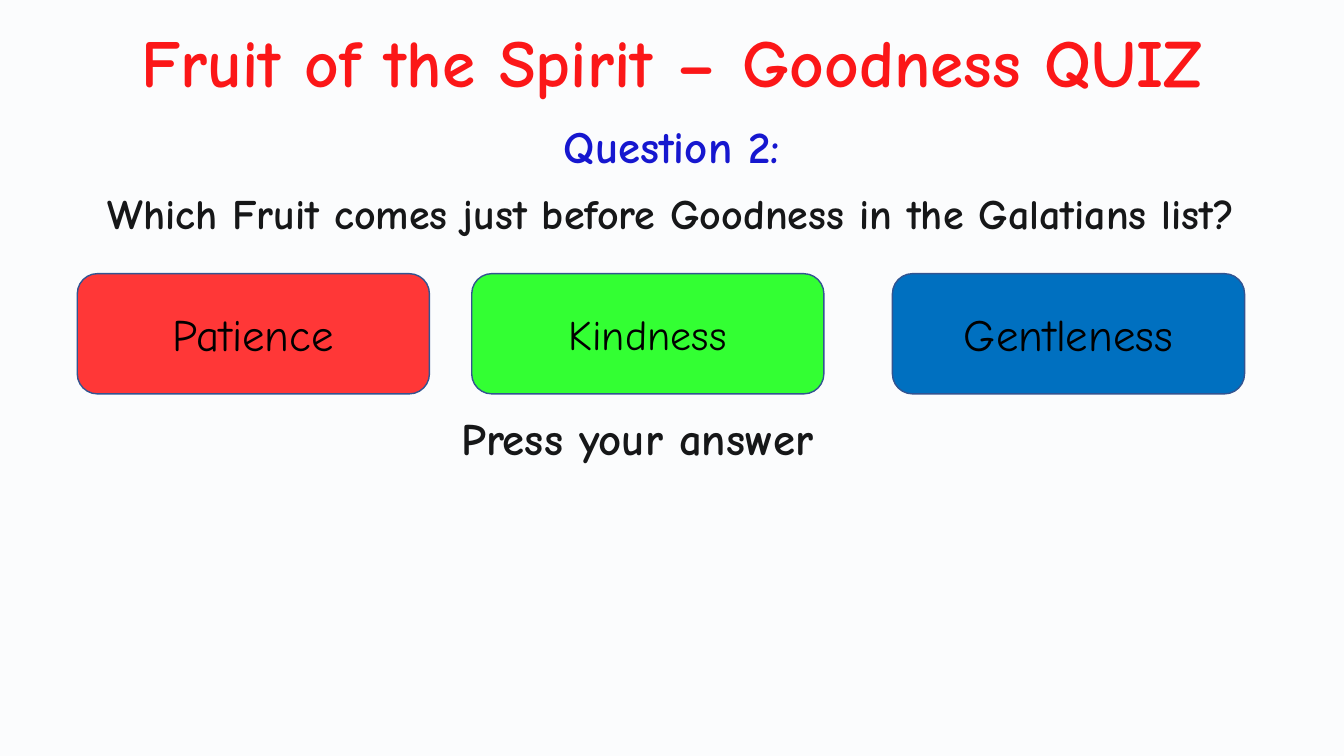
from lxml import etree
from pptx import Presentation
from pptx.dml.color import RGBColor
from pptx.enum.shapes import MSO_SHAPE
from pptx.enum.text import MSO_ANCHOR, MSO_AUTO_SIZE, PP_ALIGN
from pptx.oxml.ns import qn
from pptx.util import Inches, Pt

RECTANGLE = MSO_SHAPE.RECTANGLE
ROUNDED = MSO_SHAPE.ROUNDED_RECTANGLE
TOP, MIDDLE = MSO_ANCHOR.TOP, MSO_ANCHOR.MIDDLE
LEFT, CENTER = PP_ALIGN.LEFT, PP_ALIGN.CENTER
NO_AUTOFIT = MSO_AUTO_SIZE.NONE

TITLE_ONLY_LAYOUT = 5
BLACK, RED, NAVY = "000000", "FF0000", "0000CC"
OUTLINE, VEIL = "325491", "DAE3F3"


def color(value):
    return RGBColor.from_string(value)


class QuizSlide:
    """Places are (left, top, width, height) in percent of the slide's size."""

    font_name = "Comic Neue"

    def __init__(self, presentation):
        self.width = presentation.slide_width
        self.height = presentation.slide_height
        layout = presentation.slide_layouts[TITLE_ONLY_LAYOUT]
        self.slide = presentation.slides.add_slide(layout)

    def box(self, place):
        sides = (self.width, self.height) * 2
        return [round(side * share / 100) for side, share in zip(sides, place)]

    def set_text(self, shape, text, size, text_color, bold=True, align=CENTER,
                 anchor=TOP, wrap=True):
        frame = shape.text_frame
        frame.text = text
        frame.auto_size = NO_AUTOFIT
        frame.word_wrap = wrap
        frame.vertical_anchor = anchor
        paragraph = frame.paragraphs[0]
        paragraph.alignment = align
        font = paragraph.font
        font.name, font.size, font.bold = self.font_name, Pt(size), bold
        font.color.rgb = color(text_color)
        return paragraph

    def title(self, place, text, size, text_color):
        shape = self.slide.shapes.title
        shape.left, shape.top, shape.width, shape.height = self.box(place)
        self.set_text(shape, text, size, text_color, wrap=False)

    def text(self, place, text, size, text_color=BLACK, align=CENTER,
             line_spacing=1.0, space_before=0):
        shape = self.slide.shapes.add_textbox(*self.box(place))
        paragraph = self.set_text(shape, text, size, text_color, align=align)
        paragraph.line_spacing = line_spacing
        paragraph.space_before = Pt(space_before)

    def panel(self, kind, place, fill):
        shape = self.slide.shapes.add_shape(kind, *self.box(place))
        shape.shadow.inherit = False
        shape.fill.solid()
        shape.fill.fore_color.rgb = color(fill)
        shape.line.color.rgb = color(OUTLINE)
        shape.line.width = Pt(1)
        return shape

    def veil(self, place, fill, opacity):
        """Tint the slide with a panel whose opacity is in percent."""
        shape = self.panel(RECTANGLE, place, fill)
        fill_color = shape.element.spPr.find(qn("a:solidFill"))[0]
        alpha = etree.SubElement(fill_color, qn("a:alpha"))
        alpha.set("val", str(opacity * 1000))

    def answer(self, place, text, size, fill):
        shape = self.panel(ROUNDED, place, fill)
        self.set_text(shape, text, size, BLACK, bold=False, anchor=MIDDLE)


def main():
    presentation = Presentation()
    presentation.slide_width = Inches(13.33)
    presentation.slide_height = Inches(7.5)
    quiz = QuizSlide(presentation)

    quiz.title((3.3, 2, 93.4, 12.1),
               "Fruit of the Spirit – Goodness QUIZ", 48, RED)
    quiz.text((1.35, 25.3, 97.2, 9.6),
              "Which Fruit comes just before Goodness in the Galatians list?",
              30, line_spacing=Pt(30), space_before=10)
    quiz.text((33.6, 54.5, 50.5, 9.6), "Press your answer", 32,
              align=LEFT, line_spacing=0.9, space_before=7.5)
    quiz.text((33.45, 15.1, 33.1, 8.5), "Question 2:", 32, NAVY)

    quiz.veil((-3.2, -7.6, 106.4, 116.4), VEIL, opacity=10)

    answers = [
        (5.75, "Patience", 32, "FF3737"),
        (35.1, "Kindness", 30, "33FF33"),
        (66.4, "Gentleness", 32, "0070C0"),
    ]
    for left, text, size, fill in answers:
        quiz.answer((left, 36.2, 26.2, 15.9), text, size, fill)

    presentation.save("out.pptx")


if __name__ == "__main__":
    main()
